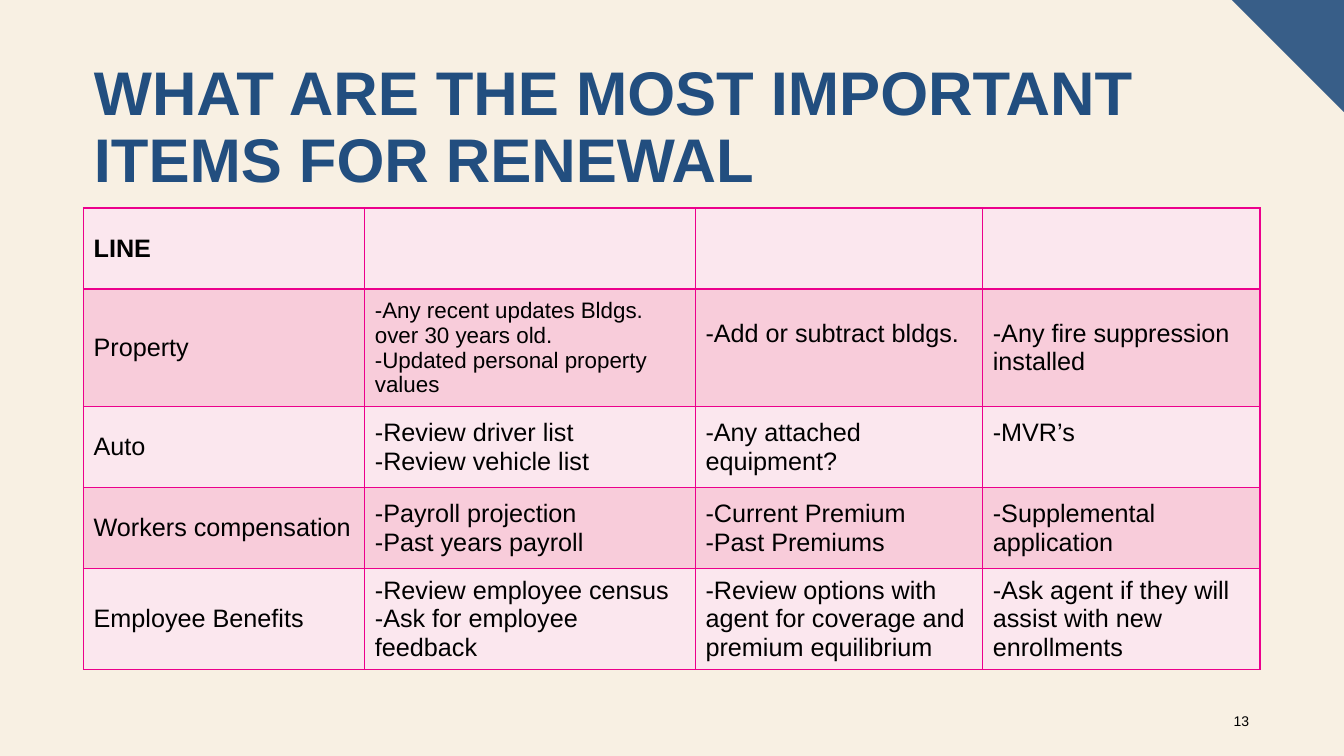
from lxml import etree
from pptx import Presentation
from pptx.dml.color import RGBColor
from pptx.enum.text import MSO_ANCHOR, PP_ALIGN
from pptx.oxml.ns import qn
from pptx.util import Pt

MIDDLE, BOTTOM = MSO_ANCHOR.MIDDLE, MSO_ANCHOR.BOTTOM
LEFT, RIGHT = PP_ALIGN.LEFT, PP_ALIGN.RIGHT
CREAM = RGBColor(0xF8, 0xF0, 0xE3)
CORNER_BLUE = RGBColor(0x38, 0x5E, 0x88)
TITLE_BLUE = RGBColor(0x22, 0x4E, 0x7F)
MAGENTA = RGBColor(0xEC, 0x00, 0x8C)
PALE_PINK = RGBColor(0xFB, 0xE7, 0xEE)
PINK = RGBColor(0xF8, 0xCC, 0xDA)
BLACK = RGBColor(0, 0, 0)

WIDTH, HEIGHT = 960, 540
COLUMNS = [200.9, 236.2, 205.2, 198]
ROW_HEIGHT = 57.9
ROWS = [
    ["LINE", "", "", ""],
    ["Property",
     "-Any recent updates Bldgs. over 30 years old.\n-Updated personal property values",
     "-Add or subtract bldgs.", "-Any fire suppression installed"],
    ["Auto", "-Review driver list\n-Review vehicle list",
     "-Any attached equipment?", "-MVR’s"],
    ["Workers compensation", "-Payroll projection\n-Past years payroll",
     "-Current Premium\n-Past Premiums", "-Supplemental application"],
    ["Employee Benefits", "-Review employee census\n-Ask for employee feedback",
     "-Review options with agent for coverage and premium equilibrium",
     "-Ask agent if they will assist with new enrollments"],
]
SMALL_CELLS = {(1, 1)}
RAISED_CELLS = {(1, 2), (2, 3)}


def write(tf, text, size=18, color=BLACK, bold=False, align=LEFT, spacing=1.0):
    """Fill a text frame with one paragraph per line of text."""
    tf.word_wrap = True
    for i, line in enumerate(text.split("\n")):
        p = tf.add_paragraph() if i else tf.paragraphs[0]
        p.alignment, p.line_spacing = align, spacing
        p.font.size = Pt(size)
        if line:
            r = p.add_run()
            r.text = line
            r.font.name, r.font.size = "Arial", Pt(size)
            r.font.bold, r.font.color.rgb = bold, color


class SlideBuilder:
    """Draws elements on one slide, with lengths in points."""

    def __init__(self, s, border=MAGENTA, border_width=1):
        """Keep the slide and the table border style."""
        self.s, self.border, self.border_width = s, border, border_width

    def background(self, color):
        """Fill the slide background."""
        fill = self.s.background.fill
        fill.solid()
        fill.fore_color.rgb = color

    def polygon(self, points, color):
        """Draw a closed filled outline."""
        fb = self.s.shapes.build_freeform(Pt(points[0][0]), Pt(points[0][1]))
        fb.add_line_segments([(Pt(x), Pt(y)) for x, y in points[1:]])
        sp = fb.convert_to_shape()
        sp.shadow.inherit = False
        sp.fill.solid()
        sp.fill.fore_color.rgb = color
        sp.line.fill.background()

    def text(self, x, y, w, h, text, anchor=MIDDLE, **style):
        """Add a text box."""
        tf = self.s.shapes.add_textbox(Pt(x), Pt(y), Pt(w), Pt(h)).text_frame
        tf.vertical_anchor = anchor
        write(tf, text, **style)

    def outline(self, cell):
        """Draw all four borders of a cell."""
        tc_pr = cell._tc.get_or_add_tcPr()
        for i, side in enumerate(("a:lnL", "a:lnR", "a:lnT", "a:lnB")):
            ln = etree.Element(qn(side), w=str(Pt(self.border_width)))
            fill = etree.SubElement(ln, qn("a:solidFill"))
            etree.SubElement(fill, qn("a:srgbClr"), val=str(self.border))
            tc_pr.insert(i, ln)

    def table(self, x, y, columns, row_height, rows):
        """Add a table with rows in alternating colours."""
        table = self.s.shapes.add_table(
            len(rows), len(columns), Pt(x), Pt(y),
            Pt(sum(columns)), Pt(row_height * len(rows))).table
        for column, width in zip(table.columns, columns):
            column.width = Pt(width)
        for i, row in enumerate(rows):
            table.rows[i].height = Pt(row_height)
            for j, text in enumerate(row):
                cell = table.cell(i, j)
                cell.vertical_anchor = MIDDLE
                cell.fill.solid()
                cell.fill.fore_color.rgb = PINK if i % 2 else PALE_PINK
                if (i, j) in RAISED_CELLS:
                    cell.margin_bottom = Pt(24.2)
                write(cell.text_frame, text, bold=i == 0,
                      size=16 if (i, j) in SMALL_CELLS else 18)
                self.outline(cell)


def main():
    """Build the renewal items slide."""
    prs = Presentation()
    prs.slide_width, prs.slide_height = Pt(WIDTH), Pt(HEIGHT)
    slide = SlideBuilder(prs.slides.add_slide(prs.slide_layouts[6]))
    slide.background(CREAM)
    slide.polygon([(WIDTH - 80, 0), (WIDTH, 0), (WIDTH, 80)], CORNER_BLUE)
    slide.text(60, 39, 840, 104.4, "WHAT ARE THE MOST IMPORTANT ITEMS FOR RENEWAL",
               anchor=BOTTOM, size=44, color=TITLE_BLUE, bold=True, spacing=0.9)
    slide.table(59.7, 148.6, COLUMNS, ROW_HEIGHT, ROWS)
    slide.text(863.3, 500.4, 36, 28.8, "13", size=10, align=RIGHT)
    prs.save("out.pptx")


if __name__ == "__main__":
    main()
